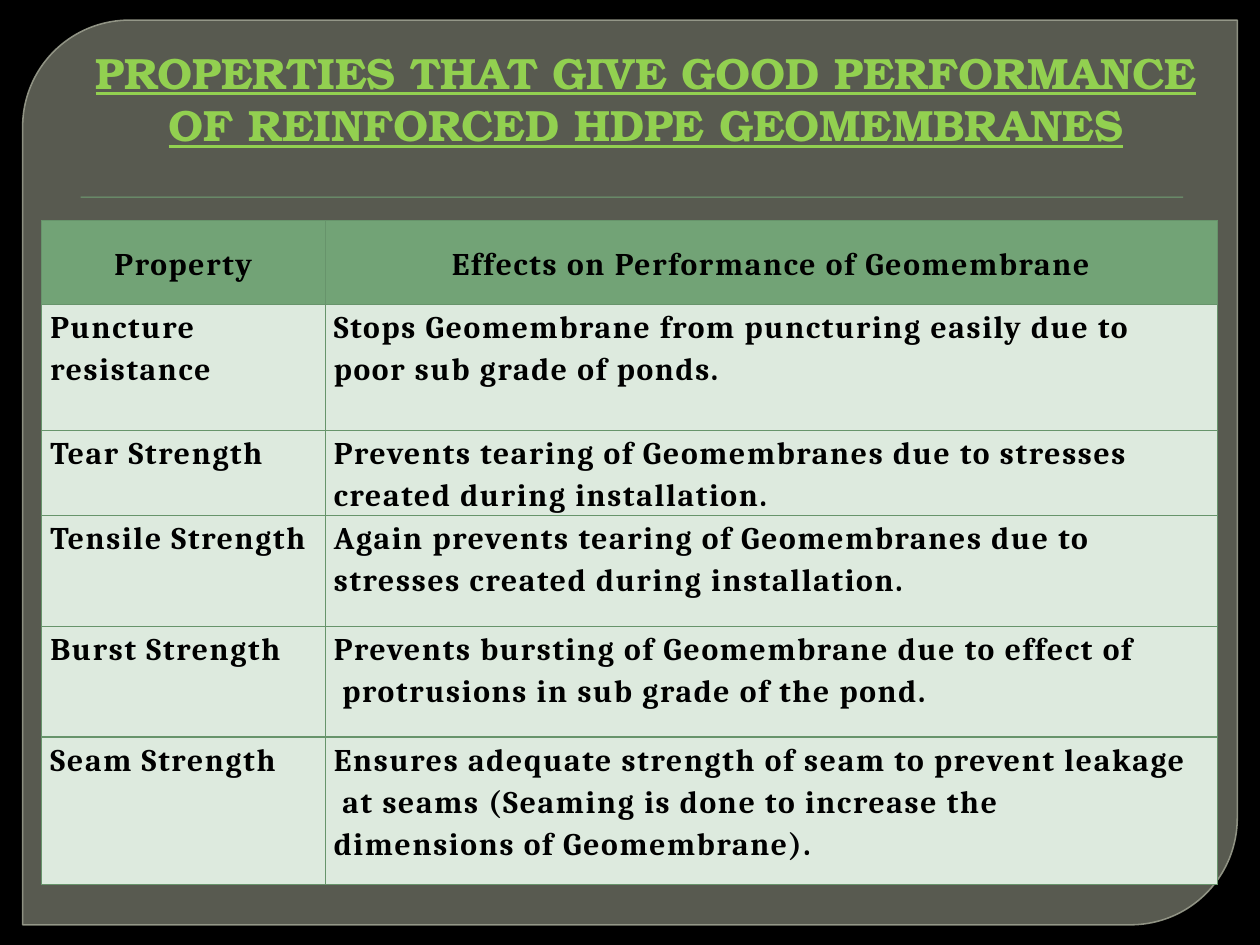
from lxml import etree
from pptx import Presentation
from pptx.dml.color import RGBColor
from pptx.enum.shapes import MSO_SHAPE
from pptx.enum.text import MSO_ANCHOR, PP_ALIGN
from pptx.oxml.ns import qn
from pptx.util import Inches, Pt

BLACK = RGBColor(0x00, 0x00, 0x00)
PANEL = RGBColor(0x88, 0x8B, 0x7B)
PANEL_EDGE = RGBColor(0x9D, 0xA0, 0x90)
GREEN = RGBColor(0x72, 0xA3, 0x76)
PALE_GREEN = RGBColor(0xDD, 0xEA, 0xDE)
BORDER = RGBColor(0x67, 0x94, 0x6B)
LIME = RGBColor(0x92, 0xD0, 0x50)

CENTER = PP_ALIGN.CENTER
JUSTIFY = PP_ALIGN.JUSTIFY
MIDDLE = MSO_ANCHOR.MIDDLE
ROUNDED_PANEL = MSO_SHAPE.ROUND_2_DIAG_RECTANGLE
RECTANGLE = MSO_SHAPE.RECTANGLE

TITLE_FONT = {"name": "TeX Gyre Bonum", "size": Pt(25), "bold": True, "underline": True}
TABLE_FONT = {"name": "Cambria", "size": Pt(18), "bold": True}
CELL_MARGINS = {
    "margin_left": Inches(0.07), "margin_right": Inches(0.07),
    "margin_top": 0, "margin_bottom": 0,
}
HEADER_PARAGRAPH = {"alignment": CENTER, "line_spacing": Pt(36)}
BODY_PARAGRAPH = {"alignment": JUSTIFY, "line_spacing": Pt(24)}

COLUMN_WIDTHS = [2.25, 7.08]
ROW_HEIGHTS = [0.67, 1, 0.67, 0.88, 0.88, 1.17]
# Each cell is a list of lines
PROPERTY_ROWS = [
    (["Property"], ["Effects on Performance of Geomembrane"]),
    (["Puncture", "resistance"],
     ["Stops Geomembrane from puncturing easily due to", "poor sub grade of ponds."]),
    (["Tear Strength"],
     ["Prevents tearing of Geomembranes due to stresses", "created during installation."]),
    (["Tensile Strength"],
     ["Again prevents tearing of Geomembranes due to",
      "stresses created during installation."]),
    (["Burst Strength"],
     ["Prevents bursting of Geomembrane due to effect of",
      " protrusions in sub grade of the pond."]),
    (["Seam Strength"],
     ["Ensures adequate strength of seam to prevent leakage",
      " at seams (Seaming is done to increase the",
      "dimensions of Geomembrane)."]),
]


def set_format(target, values):
    for name, value in values.items():
        setattr(target, name, value)


def set_opacity(color_format_parent, percent):
    color = next(color_format_parent.iter(qn("a:srgbClr")))
    etree.SubElement(color, qn("a:alpha"), val=str(percent * 1000))


def add_span(para, text, font, color):
    span = para.add_run()
    span.text = text
    set_format(span.font, font)
    span.font.color.rgb = color
    return span


def add_filled_shape(slide, kind, position, color):
    shape = slide.shapes.add_shape(kind, *map(Inches, position))
    shape.shadow.inherit = False
    shape.fill.solid()
    shape.fill.fore_color.rgb = color
    shape.line.fill.background()
    return shape


def add_panel(slide):
    panel = add_filled_shape(slide, ROUNDED_PANEL, (0.18, 0.16, 9.64, 7.18), PANEL)
    panel.adjustments[0] = 0.118
    panel.adjustments[1] = 0
    set_opacity(panel.fill._xPr.find(qn("a:solidFill")), 65)
    panel.line.color.rgb = PANEL_EDGE
    panel.line.width = Pt(0.87)
    set_opacity(panel.line._get_or_add_ln(), 88)


def add_title(slide, text):
    box = slide.shapes.add_textbox(*map(Inches, (0.5, 0.31, 9.25, 0.94)))
    set_format(box.text_frame, {"word_wrap": True, "vertical_anchor": MIDDLE})
    para = box.text_frame.paragraphs[0]
    para.alignment = CENTER
    add_span(para, text, TITLE_FONT, LIME)


def add_borders(cell):
    properties = cell._tc.get_or_add_tcPr()
    for side in ("lnL", "lnR", "lnT", "lnB"):
        line = etree.SubElement(properties, qn(f"a:{side}"), w=str(Pt(0.75)))
        fill = etree.SubElement(line, qn("a:solidFill"))
        etree.SubElement(fill, qn("a:srgbClr"), val=str(BORDER))


def fill_cell(cell, lines, paragraph_format, color):
    set_format(cell, CELL_MARGINS)
    add_borders(cell)
    cell.fill.solid()
    cell.fill.fore_color.rgb = color
    frame = cell.text_frame
    for index, line in enumerate(lines):
        para = frame.add_paragraph() if index else frame.paragraphs[0]
        set_format(para, paragraph_format)
        span = add_span(para, line, TABLE_FONT, BLACK)
        span.font._element.set("spc", "100")


def add_property_table(slide):
    frame = slide.shapes.add_table(
        len(ROW_HEIGHTS), len(COLUMN_WIDTHS), Inches(0.33), Inches(1.75),
        Inches(sum(COLUMN_WIDTHS)), Inches(sum(ROW_HEIGHTS)))
    table = frame.table
    table.horz_banding = False
    for column, width in zip(table.columns, COLUMN_WIDTHS):
        column.width = Inches(width)
    for index, (row, height) in enumerate(zip(table.rows, ROW_HEIGHTS)):
        row.height = Inches(height)
        paragraph_format = BODY_PARAGRAPH if index else HEADER_PARAGRAPH
        color = PALE_GREEN if index else GREEN
        for cell, lines in zip(row.cells, PROPERTY_ROWS[index]):
            fill_cell(cell, lines, paragraph_format, color)


def main():
    deck = Presentation()
    deck.slide_width, deck.slide_height = Inches(10), Inches(7.5)
    slide = deck.slides.add_slide(deck.slide_layouts[6])

    # Background, panel and rule
    slide.background.fill.solid()
    slide.background.fill.fore_color.rgb = BLACK
    add_panel(slide)
    add_filled_shape(slide, RECTANGLE, (0.64, 1.56, 8.75, 0.01), GREEN)

    # Content
    add_property_table(slide)
    add_title(slide, "PROPERTIES THAT GIVE GOOD PERFORMANCE "
                     "OF REINFORCED HDPE GEOMEMBRANES")
    deck.save("out.pptx")


if __name__ == "__main__":
    main()
